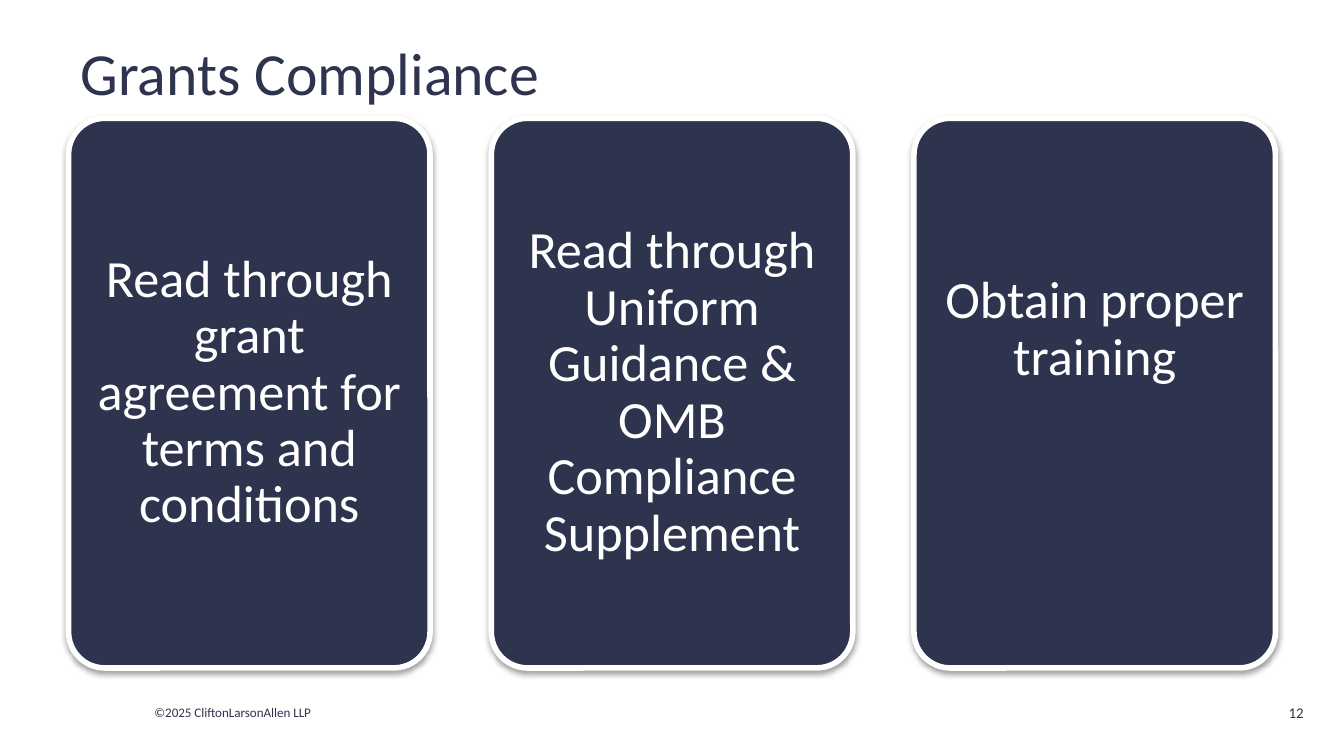
from lxml import etree
from pptx import Presentation
from pptx.dml.color import RGBColor
from pptx.enum.shapes import MSO_SHAPE
from pptx.enum.text import MSO_ANCHOR, MSO_AUTO_SIZE, PP_ALIGN
from pptx.oxml.ns import qn
from pptx.util import Inches, Pt

ROUND = MSO_SHAPE.ROUNDED_RECTANGLE
MIDDLE = MSO_ANCHOR.MIDDLE
FIXED = MSO_AUTO_SIZE.NONE
LEFT, CENTER, RIGHT = PP_ALIGN.LEFT, PP_ALIGN.CENTER, PP_ALIGN.RIGHT

COLORS = {"navy": "2E334E", "white": "FFFFFF", "shade": "000000"}
FONT = "Calibri"
WIDTH = 10
PAD = 0.12
FIRST, LAST = 0.51, 6.8
CARDS = [
    ("Read through grant agreement for terms and conditions", PAD),
    ("Read through Uniform Guidance & OMB Compliance Supplement", PAD),
    ("Obtain proper training", 1.06),
]
STEP = (LAST - FIRST) / (len(CARDS) - 1)


def color(name):
    return RGBColor.from_string(COLORS[name])


def apply(target, values):
    for name, value in values.items():
        setattr(target, name, value)


def write(shape, text, size, ink="navy", align=LEFT, **frame):
    """Fill a shape with one paragraph; frame holds text frame settings."""
    box = shape.text_frame
    apply(box, {"word_wrap": True, "auto_size": FIXED,
                "vertical_anchor": MIDDLE, **frame})
    box.text = text
    para = box.paragraphs[0]
    para.alignment = align
    apply(para.font, {"name": FONT, "size": Pt(size)})
    para.font.color.rgb = color(ink)
    return para


def add_title(slide, text):
    title = slide.shapes.title
    apply(title, {"left": Inches(0.5), "top": Inches(0.16),
                  "width": Inches(9), "height": Inches(0.75)})
    write(title, text, 32)


def add_label(slide, text, size, place, align=LEFT):
    box = slide.shapes.add_textbox(*map(Inches, place))
    write(box, text, size, align=align)


def add_shadow(shape):
    shape.shadow.inherit = False
    effects = shape.element.spPr.find(qn("a:effectLst"))
    outer = etree.SubElement(effects, qn("a:outerShdw"), blurRad="40000",
                             dist="20000", dir="5400000", rotWithShape="0")
    shade = etree.SubElement(outer, qn("a:srgbClr"), val=COLORS["shade"])
    etree.SubElement(shade, qn("a:alpha"), val="38000")


def add_card(slide, left, text, bottom):
    """Add a rounded card; a deeper bottom margin lifts its text."""
    card = slide.shapes.add_shape(ROUND, Inches(left), Inches(0.88),
                                  Inches(2.69), Inches(4.09))
    card.adjustments[0] = 0.1
    card.fill.solid()
    card.fill.fore_color.rgb = color("navy")
    card.line.color.rgb = color("white")
    card.line.width = Pt(3)
    add_shadow(card)
    para = write(card, text, 28, "white", CENTER,
                 margin_left=Inches(PAD), margin_right=Inches(PAD),
                 margin_top=Inches(PAD), margin_bottom=Inches(bottom))
    para.line_spacing = 0.9


def main():
    deck = Presentation()
    apply(deck, {"slide_width": Inches(WIDTH),
                 "slide_height": Inches(WIDTH * 9 / 16)})
    slide = deck.slides.add_slide(deck.slide_layouts[5])
    add_title(slide, "Grants Compliance")
    for i, (text, bottom) in enumerate(CARDS):
        add_card(slide, FIRST + i * STEP, text, bottom)
    add_label(slide, "©2025 CliftonLarsonAllen LLP", 7,
              (1.05, 5.19, 1.51, 0.22))
    add_label(slide, "12", 8, (9.37, 5.11, 0.43, 0.38), RIGHT)
    deck.save("out.pptx")


if __name__ == "__main__":
    main()
